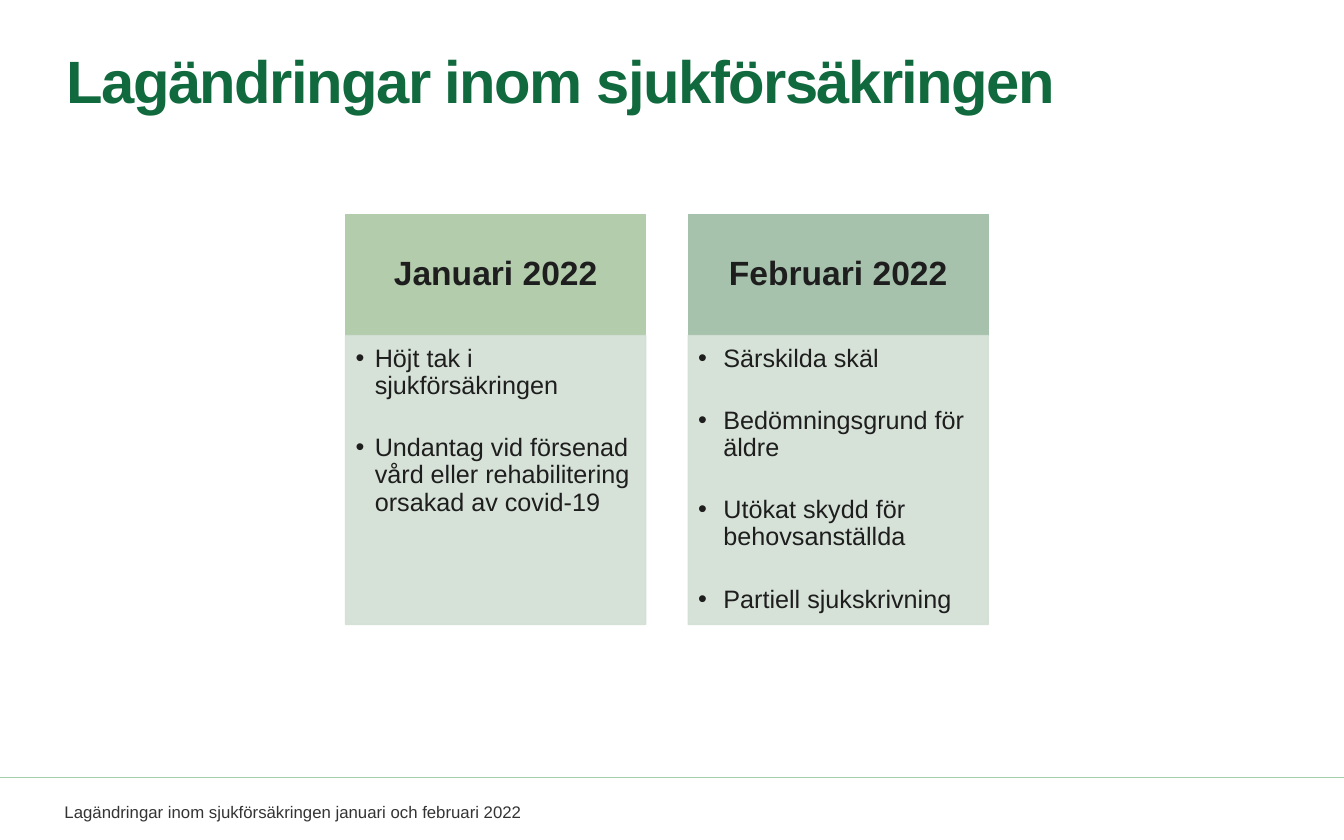
from dataclasses import dataclass

from lxml.etree import SubElement
from pptx import Presentation
from pptx.dml.color import RGBColor
from pptx.enum.shapes import MSO_CONNECTOR, MSO_SHAPE
from pptx.enum.text import MSO_ANCHOR, MSO_AUTO_SIZE, PP_ALIGN
from pptx.oxml.ns import qn
from pptx.util import Inches, Pt


@dataclass(frozen=True)
class Theme:
    font: str = "Arial"
    title: str = "11693E"
    text: str = "1E1E1E"
    footer_text: str = "343434"
    footer_line: str = "A6D0AB"
    footer_fill: str = "FFFFFF"
    january: str = "B3CCAC"
    february: str = "A7C2AC"
    body: str = "D2DFD4"
    title_size: float = 42.7
    heading_size: float = 24
    body_size: float = 18
    footer_size: float = 12


THEME = Theme()
SLIDE_WIDTH, SLIDE_HEIGHT = 13.34, 8.34
COMPARISON_LAYOUT = 4
HEADING_HEIGHT = 1.2
COLUMN_WIDTH, COLUMN_HEIGHT = 2.98, 4.07
COLUMN_LEFT, COLUMN_TOP, COLUMN_PITCH = 3.43, 2.13, 3.4
COLUMNS = [
    ("Januari 2022", THEME.january, 0.19, [
        "Höjt tak i sjukförsäkringen",
        "Undantag vid försenad vård eller rehabilitering orsakad av covid-19",
    ]),
    ("Februari 2022", THEME.february, 0.25, [
        "Särskilda skäl",
        "Bedömningsgrund för äldre",
        "Utökat skydd för behovsanställda",
        "Partiell sjukskrivning",
    ]),
]


def place(shape, left, top, width, height):
    shape.left, shape.top = Inches(left), Inches(top)
    shape.width, shape.height = Inches(width), Inches(height)


def set_frame(shape, anchor, margins=(0, 0, 0, 0), wrap=True):
    """Prepare a text frame; margins are left, top, right, bottom."""
    frame = shape.text_frame
    frame.word_wrap = wrap
    frame.auto_size = MSO_AUTO_SIZE.NONE
    frame.vertical_anchor = anchor
    (frame.margin_left, frame.margin_top,
     frame.margin_right, frame.margin_bottom) = map(Inches, margins)
    return frame


def add_run(paragraph, text, size, color, bold=False):
    run = paragraph.add_run()
    run.text = text
    run.font.name = THEME.font
    run.font.size = Pt(size)
    run.font.bold = bold
    run.font.color.rgb = RGBColor.from_string(color)
    return run


def set_spacing(paragraph, after=0):
    paragraph.line_spacing = 0.9
    paragraph.space_before = Pt(0)
    paragraph.space_after = Pt(after)


def paint(shape, color, opacity=100):
    """Give fill and outline the same colour and opacity in percent."""
    shape.fill.solid()
    shape.fill.fore_color.rgb = RGBColor.from_string(color)
    shape.line.color.rgb = RGBColor.from_string(color)
    shape.line.width = Pt(0.85)
    if opacity < 100:
        for color_element in shape.element.spPr.iter(qn("a:srgbClr")):
            SubElement(color_element, qn("a:alpha"), val=str(opacity * 1000))


def add_bullet(paragraph, indent):
    properties = paragraph._p.get_or_add_pPr()
    properties.set("marL", str(Inches(indent)))
    properties.set("indent", str(-Inches(indent)))
    SubElement(properties, qn("a:buFont"), typeface=THEME.font)
    SubElement(properties, qn("a:buChar"), char="•")


def fill_title(shape, text, left, top, width, height):
    place(shape, left, top, width, height)
    paragraph = set_frame(shape, MSO_ANCHOR.MIDDLE).paragraphs[0]
    paragraph.alignment = PP_ALIGN.LEFT
    set_spacing(paragraph)
    run = add_run(paragraph, text, THEME.title_size, THEME.title, bold=True)
    run.font._element.set("spc", "-110")


def fill_column(heading, body, column, left, top, width, height):
    """Stack a coloured heading on a bulleted list."""
    month, color, indent, items = column
    place(heading, left, top, width, HEADING_HEIGHT)
    paint(heading, color)
    frame = set_frame(heading, MSO_ANCHOR.MIDDLE, (0.19, 0.11, 0.19, 0.11))
    paragraph = frame.paragraphs[0]
    paragraph.alignment = PP_ALIGN.CENTER
    set_spacing(paragraph)
    add_run(paragraph, month, THEME.heading_size, THEME.text, bold=True)

    place(body, left, top + HEADING_HEIGHT, width, height - HEADING_HEIGHT)
    paint(body, THEME.body, opacity=90)
    frame = set_frame(body, MSO_ANCHOR.TOP, (0.1, 0.1, 0.14, 0.16))
    for index, item in enumerate(items):
        paragraph = frame.add_paragraph() if index else frame.paragraphs[0]
        set_spacing(paragraph, after=25 if index < len(items) - 1 else 0)
        add_bullet(paragraph, indent)
        add_run(paragraph, item, THEME.body_size, THEME.text)


def add_footer(slide, text, left, top, width, height):
    band = slide.shapes.add_shape(
        MSO_SHAPE.RECTANGLE, *map(Inches, (left, top, width, height)))
    band.shadow.inherit = False
    band.fill.solid()
    band.fill.fore_color.rgb = RGBColor.from_string(THEME.footer_fill)
    band.line.fill.background()

    label = slide.shapes.add_textbox(
        *map(Inches, (left + 0.64, top + 0.24, 4.72, 0.2)))
    frame = set_frame(label, MSO_ANCHOR.TOP, wrap=False)
    add_run(frame.paragraphs[0], text, THEME.footer_size, THEME.footer_text)

    rule = slide.shapes.add_connector(
        MSO_CONNECTOR.STRAIGHT, *map(Inches, (left, top, left + width, top)))
    rule.line.color.rgb = RGBColor.from_string(THEME.footer_line)
    rule.line.width = Pt(1)
    SubElement(rule.element.spPr, qn("a:effectLst"))


def build_law_changes_slide(presentation):
    slide = presentation.slides.add_slide(
        presentation.slide_layouts[COMPARISON_LAYOUT])
    title, *parts = slide.placeholders
    fill_title(title, "Lagändringar inom sjukförsäkringen",
               0.66, 0.14, 11.91, 1.39)
    for index, column in enumerate(COLUMNS):
        heading, body = parts[2 * index:2 * index + 2]
        fill_column(heading, body, column, COLUMN_LEFT + index * COLUMN_PITCH,
                    COLUMN_TOP, COLUMN_WIDTH, COLUMN_HEIGHT)
    add_footer(slide,
               "Lagändringar inom sjukförsäkringen januari och februari 2022",
               0, 7.72, SLIDE_WIDTH, SLIDE_HEIGHT - 7.72)


def main():
    presentation = Presentation()
    presentation.slide_width = Inches(SLIDE_WIDTH)
    presentation.slide_height = Inches(SLIDE_HEIGHT)
    build_law_changes_slide(presentation)
    presentation.save("out.pptx")


if __name__ == "__main__":
    main()
